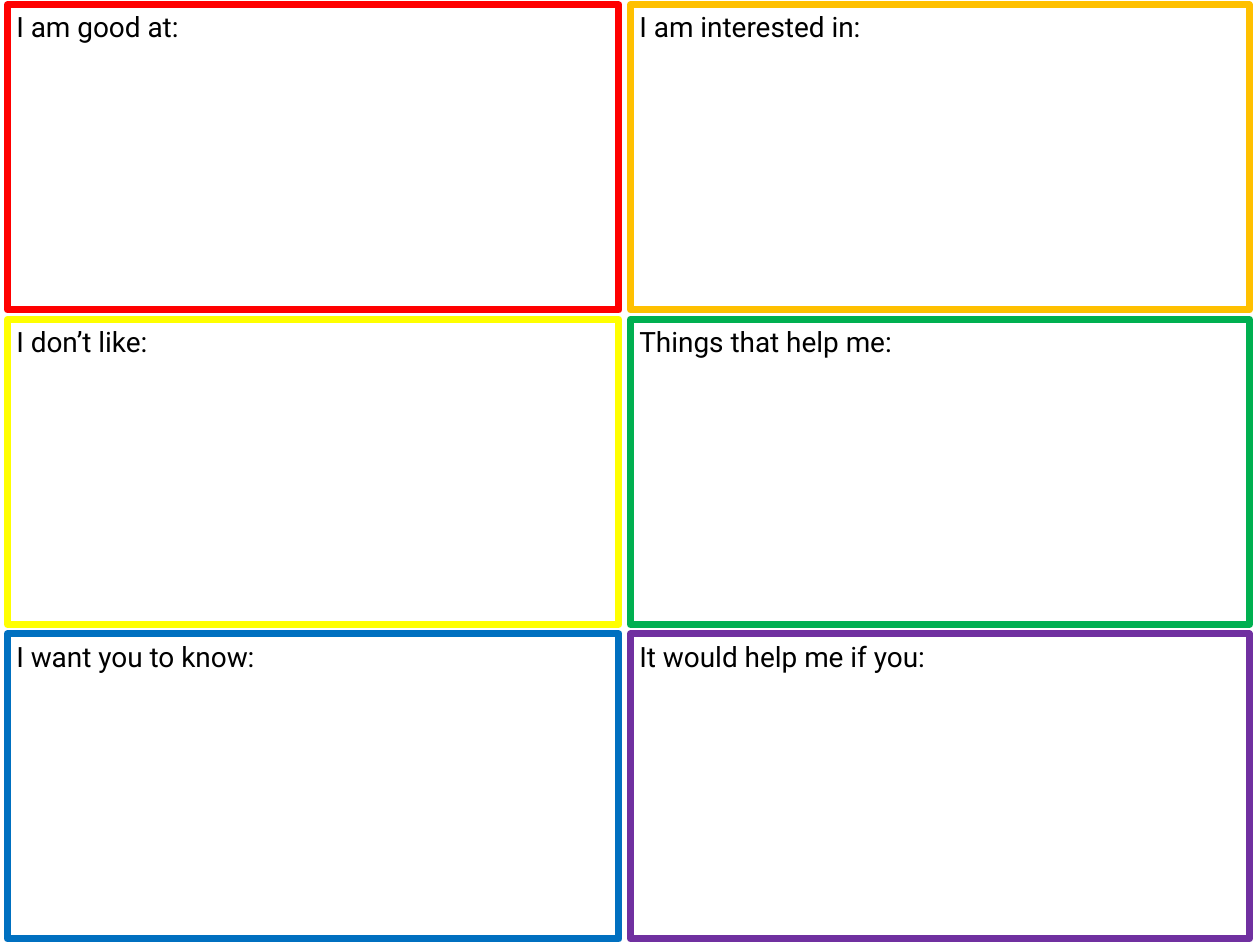
from pptx import Presentation
from pptx.dml.color import RGBColor
from pptx.enum.shapes import MSO_SHAPE
from pptx.enum.text import MSO_ANCHOR, PP_ALIGN
from pptx.util import Cm, Pt

RECTANGLE = MSO_SHAPE.RECTANGLE
TOP = MSO_ANCHOR.TOP
LEFT = PP_ALIGN.LEFT

# Grid in centimetres: (left, width) of each column, and the row rhythm
COLUMNS = [(0.15, 12.33), (12.71, 12.48)]
FIRST_TOP, ROW_STEP, ROW_HEIGHT = 0.1, 6.34, 6.15

# Prompts and frame colours, row by row
PROMPTS = [
    ("I am good at:", "FF0000"),
    ("I am interested in:", "FFC000"),
    ("I don’t like:", "FFFF00"),
    ("Things that help me:", "00B050"),
    ("I want you to know:", "0070C0"),
    ("It would help me if you:", "7030A0"),
]


def colour(hex_value):
    return RGBColor.from_string(hex_value)


class ProfilePage:
    font = "Roboto"
    size = Pt(16)
    ink = "000000"
    border = Pt(4)
    inset = Cm(0.18)

    def __init__(self, deck):
        self.page = deck.slides.add_slide(deck.slide_layouts[6])

    def prompt_box(self, left, top, width, height, text, frame_colour):
        box = self.page.shapes.add_shape(
            RECTANGLE, Cm(left), Cm(top), Cm(width), Cm(height))
        box.shadow.inherit = False
        box.fill.background()
        box.line.color.rgb = colour(frame_colour)
        box.line.width = self.border
        self.prompt_text(box.text_frame, text)

    def prompt_text(self, frame, text):
        frame.word_wrap = True
        frame.vertical_anchor = TOP
        frame.margin_left = frame.margin_right = self.inset
        frame.margin_top = frame.margin_bottom = self.inset
        para = frame.paragraphs[0]
        para.alignment = LEFT
        para.line_spacing = 0.9
        span = para.add_run()
        span.text = text
        span.font.name = self.font
        span.font.size = self.size
        span.font.color.rgb = colour(self.ink)


def main():
    deck = Presentation()
    deck.slide_width, deck.slide_height = Cm(25.4), Cm(19.05)
    profile = ProfilePage(deck)

    # Two columns by three rows of framed prompts
    for index, (text, frame_colour) in enumerate(PROMPTS):
        row, column = divmod(index, len(COLUMNS))
        left, width = COLUMNS[column]
        top = FIRST_TOP + row * ROW_STEP
        profile.prompt_box(left, top, width, ROW_HEIGHT, text, frame_colour)

    deck.save("out.pptx")


if __name__ == "__main__":
    main()
